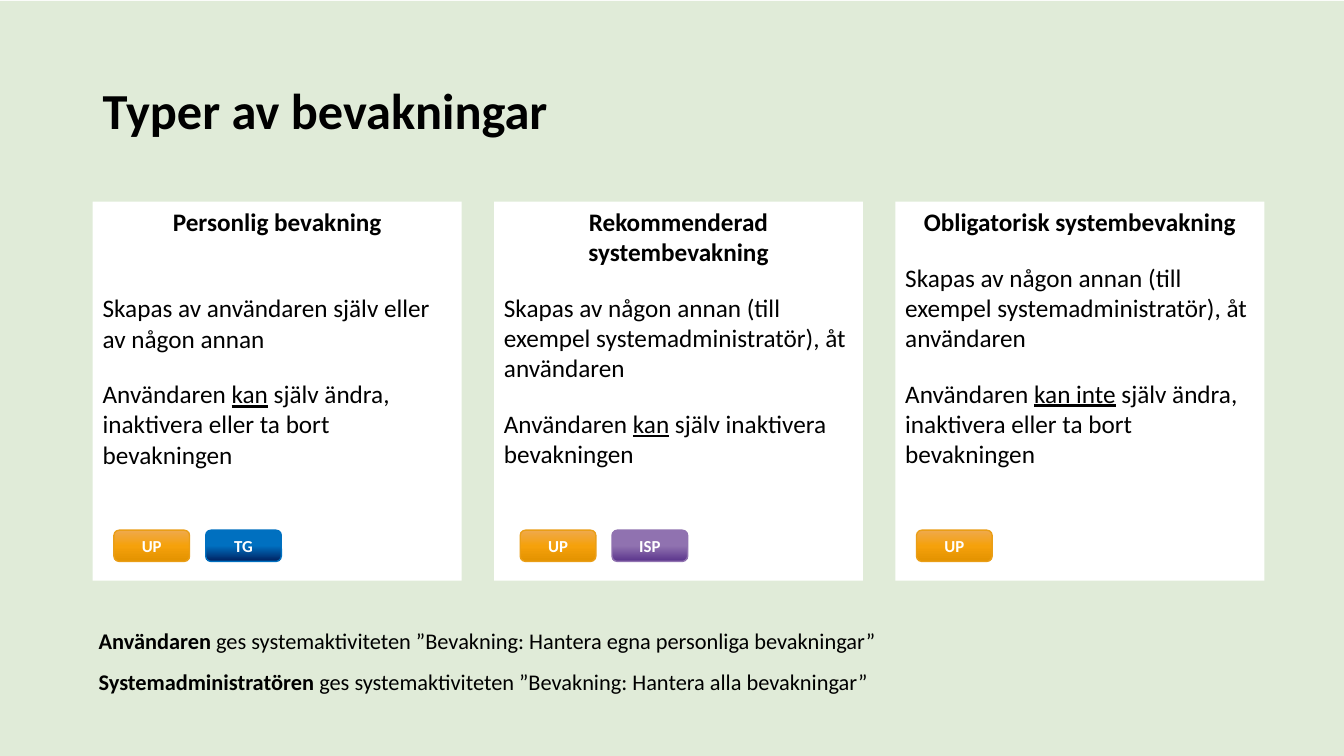
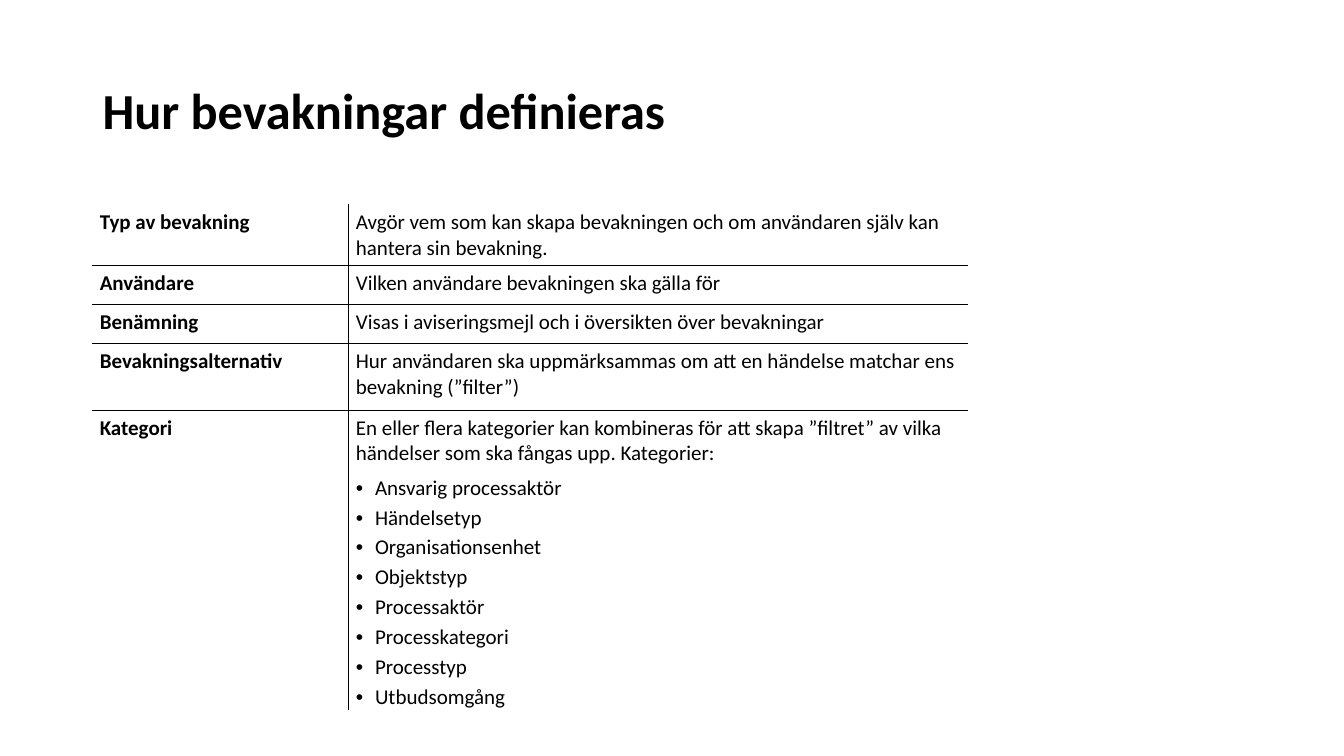
from dataclasses import dataclass

from lxml import etree
from pptx import Presentation
from pptx.dml.color import RGBColor
from pptx.enum.shapes import MSO_SHAPE
from pptx.enum.text import MSO_ANCHOR, PP_ALIGN
from pptx.oxml import parse_xml
from pptx.oxml.ns import nsdecls, qn
from pptx.util import Inches, Pt

RECT, ROUND = MSO_SHAPE.RECTANGLE, MSO_SHAPE.ROUNDED_RECTANGLE
LEFT, CENTER = PP_ALIGN.LEFT, PP_ALIGN.CENTER
TOP, MIDDLE = MSO_ANCHOR.TOP, MSO_ANCHOR.MIDDLE


@dataclass(frozen=True)
class Theme:
    font: str = "Calibri"
    ink: str = "000000"
    paper: str = "FFFFFF"
    mint: str = "E0EBD8"
    title: int = 36
    body: int = 18
    note: int = 16
    cell: int = 15
    tag: int = 12
    edge: int = 1


THEME = Theme()

# Tag label: outline, then gradient colours at start, middle and end
TAGS = {
    "UP": ("EA9E16", ("EFA94D", "F5A10B", "E39200")),
    "TG": ("0070C0", ("0070C0", "0070C0", "002060")),
    "ISP": ("9072B0", ("9072B0", "9072B0", "5B358C")),
}

OTHER = "Skapas av någon annan (till exempel systemadministratör), åt användaren"
CHANGE = " själv ändra, inaktivera eller ta bort bevakningen"

# Heading, maker, underlined verb, rest, gap below heading, tag inset, tags
CARDS = [
    ("Personlig bevakning", "Skapas av användaren själv eller av någon annan",
     "kan", CHANGE, 40, 0.21, ("UP", "TG")),
    ("Rekommenderad systembevakning", OTHER,
     "kan", " själv inaktivera bevakningen", 18, 0.26, ("UP", "ISP")),
    ("Obligatorisk systembevakning", OTHER,
     "kan inte", CHANGE, 18, 0.21, ("UP",)),
]

NOTES = [
    ("Användaren",
     " ges systemaktiviteten ”Bevakning: Hantera egna personliga bevakningar”"),
    ("Systemadministratören",
     " ges systemaktiviteten ”Bevakning: Hantera alla bevakningar”"),
]

# Row height, term, meaning
ROWS = [
    (0.6, "Typ av bevakning", "Avgör vem som kan skapa bevakningen och om "
     "användaren själv kan hantera sin bevakning."),
    (0.39, "Användare", "Vilken användare bevakningen ska gälla för"),
    (0.39, "Benämning", "Visas i aviseringsmejl och i översikten över bevakningar"),
    (0.66, "Bevakningsalternativ", "Hur användaren ska uppmärksammas om att en "
     "händelse matchar ens bevakning (”filter”)"),
    (2.97, "Kategori", "En eller flera kategorier kan kombineras för att skapa "
     "”filtret” av vilka händelser som ska fångas upp. Kategorier:"),
]

KINDS = ["Ansvarig processaktör", "Händelsetyp", "Organisationsenhet",
         "Objektstyp", "Processaktör", "Processkategori", "Processtyp",
         "Utbudsomgång"]


# Text
def add_dot(para):
    props = para._p.get_or_add_pPr()
    props.set("marL", str(Inches(0.19)))
    props.set("indent", str(-Inches(0.19)))
    etree.SubElement(props, qn("a:buFont")).set("typeface", "Arial")
    etree.SubElement(props, qn("a:buChar")).set("char", "•")


def write(frame, *runs, size=THEME.body, color=THEME.ink, bold=False,
          align=LEFT, before=None, after=None, lead=None, dot=False):
    """Add a paragraph; a run is a string or a (string, font settings) pair."""
    first = frame.paragraphs[0]
    para = frame.add_paragraph() if first.runs else first
    if dot:
        add_dot(para)
    para.alignment = align
    if before is not None:
        para.space_before = Pt(before)
    if after is not None:
        para.space_after = Pt(after)
    if lead:
        para.line_spacing = lead
    for part in runs:
        text, extra = (part, {}) if isinstance(part, str) else part
        run = para.add_run()
        run.text = text
        font = run.font
        font.name, font.size, font.bold = THEME.font, Pt(size), bold
        font.color.rgb = RGBColor.from_string(color)
        for key, value in extra.items():
            setattr(font, key, value)


# Shapes
def add_text(slide, x, y, w, h, anchor=TOP, wrap=True):
    frame = slide.shapes.add_textbox(
        Inches(x), Inches(y), Inches(w), Inches(h)).text_frame
    frame.word_wrap, frame.vertical_anchor = wrap, anchor
    return frame


def add_box(slide, x, y, w, h, fill=None, kind=RECT, anchor=TOP):
    box = slide.shapes.add_shape(
        kind, Inches(x), Inches(y), Inches(w), Inches(h))
    box.shadow.inherit = False
    box.line.fill.background()
    if fill:
        box.fill.solid()
        box.fill.fore_color.rgb = RGBColor.from_string(fill)
    box.text_frame.word_wrap = True
    box.text_frame.vertical_anchor = anchor
    return box


def add_tag(slide, x, y, label):
    edge, shades = TAGS[label]
    tag = add_box(slide, x, y, 0.75, 0.31, kind=ROUND, anchor=MIDDLE)
    tag.line.color.rgb = RGBColor.from_string(edge)
    tag.line.width = Pt(THEME.edge)
    tag.fill.gradient()
    tag.fill.gradient_angle = 270
    stops = tag._element.spPr.find(".//" + qn("a:gsLst"))
    for stop in list(stops):
        stops.remove(stop)
    for i, shade in enumerate(shades):
        stop = etree.SubElement(stops, qn("a:gs"), pos=str(i * 50000))
        etree.SubElement(stop, qn("a:srgbClr"), val=shade)
    write(tag.text_frame, label, size=THEME.tag, color=THEME.paper,
          bold=True, align=CENTER)


def add_card(slide, x, y, card):
    head, maker, verb, rest, gap, inset, tags = card
    frame = add_box(slide, x, y, 3.66, 3.76, THEME.paper).text_frame
    write(frame, head, bold=True, align=CENTER)
    write(frame, maker, before=gap)
    write(frame, "Användaren ", (verb, {"underline": True}), rest, before=18)
    for i, label in enumerate(tags):
        add_tag(slide, x + inset + i * 0.91, y + 3.26, label)


# Table
def add_edge(cell, side):
    cell._tc.get_or_add_tcPr().append(parse_xml(
        f'<a:ln{side} {nsdecls("a")} w="{Pt(THEME.edge)}"><a:solidFill>'
        f'<a:srgbClr val="{THEME.ink}"/></a:solidFill></a:ln{side}>'))


def set_cell(cell, sides):
    for side in sides:
        add_edge(cell, side)
    cell.fill.background()
    cell.margin_left = cell.margin_right = Inches(0.07)
    cell.margin_top = cell.margin_bottom = Inches(0.05)


def add_grid(slide, x, y, widths):
    total = sum(row[0] for row in ROWS)
    table = slide.shapes.add_table(
        len(ROWS), len(widths), Inches(x), Inches(y),
        Inches(sum(widths)), Inches(total)).table
    table.first_row = table.horz_banding = False
    for col, width in zip(table.columns, widths):
        col.width = Inches(width)
    last = len(ROWS) - 1
    for i, (height, term, text) in enumerate(ROWS):
        table.rows[i].height = Inches(height)
        rules = ("T" if i else "") + ("B" if i < last else "")
        key, info = table.cell(i, 0), table.cell(i, 1)
        set_cell(key, "R" + rules)
        set_cell(info, "L" + rules)
        write(key.text_frame, term, size=THEME.cell, bold=True)
        write(info.text_frame, text, size=THEME.cell,
              after=6 if i == last else 3)
    for kind in KINDS:
        write(info.text_frame, kind, size=THEME.cell, after=3, dot=True)


# Slides
def add_slide(deck, title, back=None):
    slide = deck.slides.add_slide(deck.slide_layouts[6])
    if back:
        add_box(slide, 0, 0.01, 13.33, 7.5, back)
    frame = add_text(slide, 0.92, 0.4, 11.5, 1.45, anchor=MIDDLE)
    write(frame, title, size=THEME.title, bold=True, lead=0.9)
    return slide


def main():
    deck = Presentation()
    deck.slide_width, deck.slide_height = Inches(13.33), Inches(7.5)

    # Types
    slide = add_slide(deck, "Typer av bevakningar", THEME.mint)
    for i, card in enumerate(CARDS):
        add_card(slide, 0.92 + i * 3.98, 2, card)
    for i, (who, text) in enumerate(NOTES):
        frame = add_text(slide, 0.88, 6.17 + i * 0.41, 8.78, 0.37, wrap=False)
        write(frame, (who, {"bold": True}), text, size=THEME.note)

    # Definitions
    slide = add_slide(deck, "Hur bevakningar definieras")
    add_grid(slide, 0.92, 2.03, (2.54, 6.14))

    deck.save("out.pptx")


if __name__ == "__main__":
    main()
